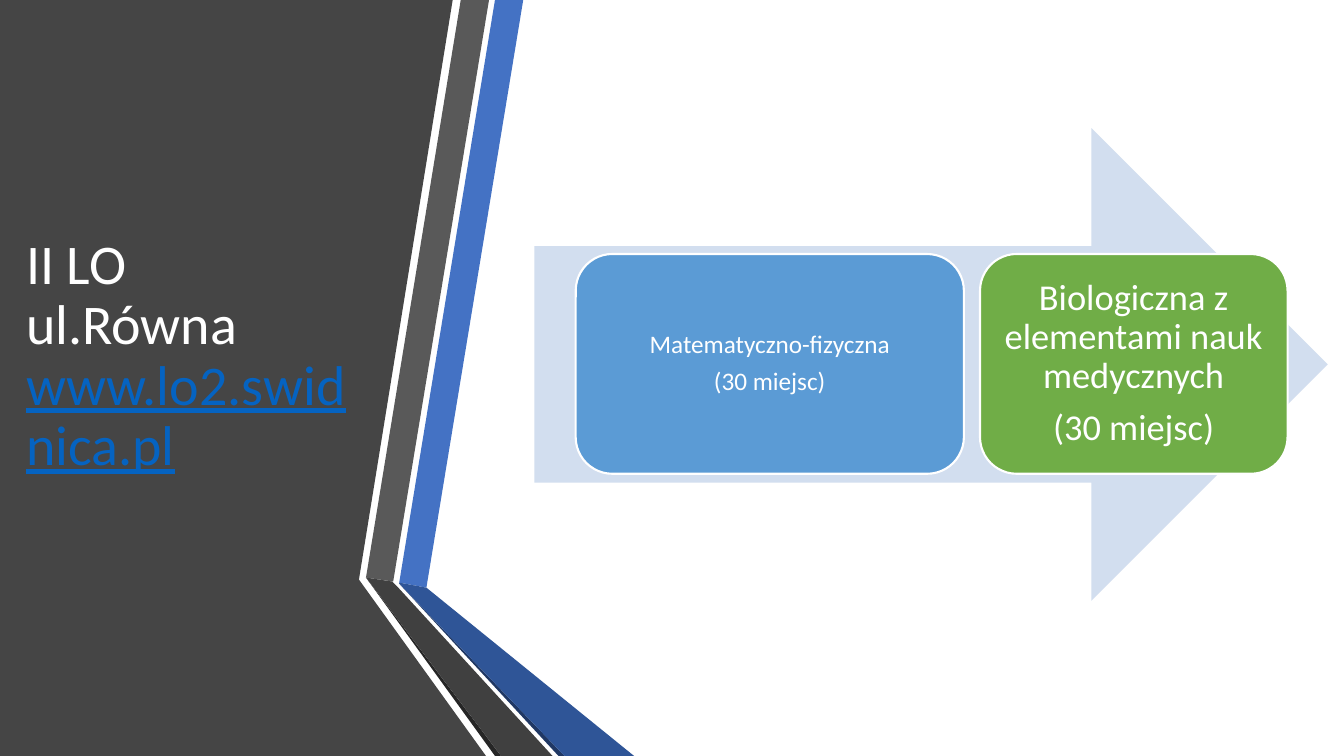
from pptx import Presentation
from pptx.dml.color import RGBColor
from pptx.enum.shapes import MSO_SHAPE as Shape
from pptx.enum.text import MSO_ANCHOR as Anchor, PP_ALIGN as Align
from pptx.util import Inches, Pt

THEME = {
    "font": "Calibri", "title_size": 40, "line_spacing": 0.9, "space_after": 0.35,
    "white": "FFFFFF", "link": "0563C1", "panel": "454545", "arrow": "D2DEEF",
    "blue": "4472C4", "blue_fold": "2F5597", "blue_shade": "203864",
    "grey": "595959", "grey_fold": "404040", "grey_shade": "262626",
    "math": "5B9BD5", "biology": "70AD47",
}

# Content
TITLE = [("II LO", "white", False), ("ul.Równa", "white", False),
         ("www.lo2.swidnica.pl", "link", True)]

# Class profiles: lines, fill, text size, left, width, text inset
PROFILES = [
    (["Matematyczno-fizyczna", "(30 miejsc)"], "math", 18, 5.71, 3.85, 0.07),
    (["Biologiczna z elementami nauk medycznych", "(30 miejsc)"],
     "biology", 26, 9.72, 3.05, 0.11),
]
CARD_TOP, CARD_HEIGHT, CARD_MARGIN = 2.52, 2.18, 0.11

# Folded ribbon: fill and outline points
RIBBON = [
    ("panel", [(0, 0), (4.49, 0), (3.56, 5.75), (4.82, 7.5), (0, 7.5)]),
    ("blue", [(3.96, 5.78), (4.23, 5.83), (5.19, 0), (4.91, 0)]),
    ("grey", [(4.85, 0), (4.57, 0), (3.63, 5.73), (3.9, 5.77)]),
    ("grey_shade", [(3.63, 5.73), (4.91, 7.5), (4.97, 7.5)]),
    ("blue_shade", [(3.96, 5.79), (5.54, 7.5), (5.6, 7.5)]),
    ("blue_fold", [(3.96, 5.78), (3.96, 5.79), (5.6, 7.5), (6.29, 7.5), (4.23, 5.83)]),
    ("grey_fold", [(5.48, 7.5), (3.95, 5.83), (3.89, 5.77), (3.63, 5.73), (4.97, 7.5)]),
]


def color(name):
    return RGBColor.from_string(THEME[name])


def paint(shape, fill, line=None):
    shape.shadow.inherit = False
    shape.fill.solid()
    shape.fill.fore_color.rgb = color(fill)
    if line:
        shape.line.color.rgb = color(line)
        shape.line.width = Pt(1.5)
    else:
        shape.line.fill.background()


def add_text(slide, lines, box, *, size, align=Align.LEFT, inset=(0.1, 0.05), after=0):
    """Each line is a (text, colour name, underline) tuple."""
    frame = slide.shapes.add_textbox(*map(Inches, box)).text_frame
    frame.word_wrap = True
    frame.vertical_anchor = Anchor.MIDDLE
    frame.margin_left = frame.margin_right = Inches(inset[0])
    frame.margin_top = frame.margin_bottom = Inches(inset[1])
    for index, (text, ink, underline) in enumerate(lines):
        paragraph = frame.add_paragraph() if index else frame.paragraphs[0]
        paragraph.alignment = align
        paragraph.line_spacing = THEME["line_spacing"]
        paragraph.space_after = Pt(size * after)
        run = paragraph.add_run()
        run.text = text
        run.font.name = THEME["font"]
        run.font.size = Pt(size)
        run.font.color.rgb = color(ink)
        run.font.underline = underline


def add_polygon(slide, fill, points):
    start, *rest = [(Inches(x), Inches(y)) for x, y in points]
    builder = slide.shapes.build_freeform(*start)
    builder.add_line_segments(rest, close=True)
    paint(builder.convert_to_shape(), fill)


def add_profile(slide, lines, fill, size, left, width, inset):
    card = slide.shapes.add_shape(
        Shape.ROUNDED_RECTANGLE, *map(Inches, (left, CARD_TOP, width, CARD_HEIGHT)))
    paint(card, fill, "white")
    box = (left + CARD_MARGIN, CARD_TOP + CARD_MARGIN,
           width - 2 * CARD_MARGIN, CARD_HEIGHT - 2 * CARD_MARGIN)
    add_text(slide, [(line, "white", False) for line in lines], box, size=size,
             align=Align.CENTER, inset=(inset, inset), after=THEME["space_after"])


def main():
    presentation = Presentation()
    presentation.slide_width, presentation.slide_height = Inches(13.33), Inches(7.5)
    slide = presentation.slides.add_slide(presentation.slide_layouts[6])

    # Side panel and ribbon
    for fill, points in RIBBON:
        add_polygon(slide, fill, points)

    # School name and address
    add_text(slide, TITLE, (0.16, 0.75, 3.47, 5.58), size=THEME["title_size"])

    # Arrow with the class profiles
    arrow = slide.shapes.add_shape(
        Shape.RIGHT_ARROW, *map(Inches, (5.3, 1.27, 7.87, 4.69)))
    paint(arrow, "arrow")
    for profile in PROFILES:
        add_profile(slide, *profile)

    presentation.save("out.pptx")


if __name__ == "__main__":
    main()
